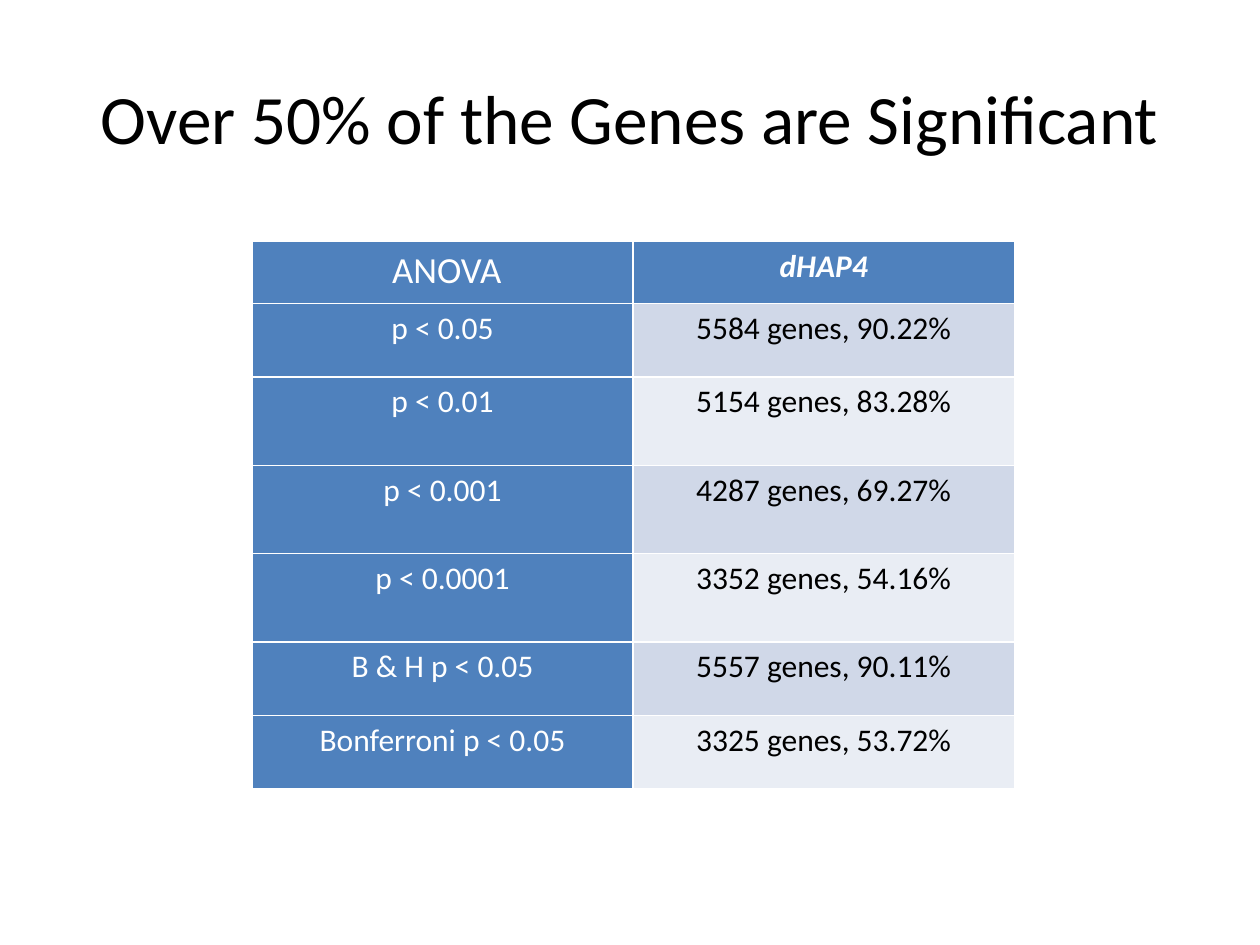
import pptx
import pptx.dml.color
import pptx.enum.text
import pptx.oxml
import pptx.oxml.ns
import pptx.util

Pt = pptx.util.Pt
RGBColor = pptx.dml.color.RGBColor
CENTER = pptx.enum.text.PP_ALIGN.CENTER

BLACK = RGBColor(0x00, 0x00, 0x00)
WHITE = RGBColor(0xFF, 0xFF, 0xFF)
BLUE = RGBColor(0x4F, 0x81, 0xBD)
BANDS = (RGBColor(0xD0, 0xD8, 0xE8), RGBColor(0xE9, 0xED, 0xF4))

HEADINGS = (" ANOVA", "dHAP4")
RESULTS = (
    ("p < 0.05", "5584 genes, 90.22%"),
    ("p < 0.01", "5154 genes, 83.28%"),
    ("p < 0.001", "4287 genes, 69.27%"),
    ("p < 0.0001", "3352 genes, 54.16%"),
    ("B & H p < 0.05", "5557 genes, 90.11%"),
    ("Bonferroni p < 0.05", "3325 genes, 53.72%"),
)
ROW_HEIGHTS = (35.5, 42, 50.5, 50.5, 50.5, 42, 42)


class Deck:
    font = "Calibri"
    title_size = 39.6
    body_size = 18
    border_width = 1

    def __init__(self, width, height):
        self.presentation = pptx.Presentation()
        self.presentation.slide_width = Pt(width)
        self.presentation.slide_height = Pt(height)
        self.slide = None

    def add_slide(self):
        title_only = self.presentation.slide_layouts[5]
        self.slide = self.presentation.slides.add_slide(title_only)

    def style(self, paragraph, size, color, bold=False, italic=False):
        paragraph.alignment = CENTER
        for run in paragraph.runs:
            run.font.name = self.font
            run.font.size = Pt(size)
            run.font.color.rgb = color
            run.font.bold = bold
            run.font.italic = italic

    def title(self, text, left, top, width, height):
        title = self.slide.shapes.title
        title.left, title.top = Pt(left), Pt(top)
        title.width, title.height = Pt(width), Pt(height)
        frame = title.text_frame
        frame.text = text
        frame.word_wrap = True
        frame.auto_size = pptx.enum.text.MSO_AUTO_SIZE.NONE
        frame.vertical_anchor = pptx.enum.text.MSO_ANCHOR.MIDDLE
        self.style(frame.paragraphs[0], self.title_size, BLACK)

    def table(self, rows, columns, left, top, width, row_heights):
        frame = self.slide.shapes.add_table(
            rows, columns, Pt(left), Pt(top), Pt(width), Pt(sum(row_heights))
        )
        for row, height in zip(frame.table.rows, row_heights):
            row.height = Pt(height)
        return frame.table

    def cell(self, cell, text, fill, color, size=body_size, **emphasis):
        cell.text_frame.text = text
        cell.margin_left = cell.margin_right = Pt(5)
        cell.margin_top = cell.margin_bottom = Pt(0)
        paragraph = cell.text_frame.paragraphs[0]
        paragraph.line_spacing = 1.15
        self.style(paragraph, size, color, **emphasis)
        self.borders(cell)
        cell.fill.solid()
        cell.fill.fore_color.rgb = fill

    def borders(self, cell):
        properties = cell._tc.get_or_add_tcPr()
        for side in ("lnL", "lnR", "lnT", "lnB"):
            properties.append(pptx.oxml.parse_xml(
                f'<a:{side} {pptx.oxml.ns.nsdecls("a")} w="{Pt(self.border_width)}">'
                f'<a:solidFill><a:srgbClr val="{WHITE}"/></a:solidFill></a:{side}>'
            ))

    def save(self):
        self.presentation.save("out.pptx")


def main():
    deck = Deck(720, 540)
    deck.add_slide()
    deck.title("Over 50% of the Genes are Significant", 36, 21.6, 648, 90)
    table = deck.table(len(ROW_HEIGHTS), len(HEADINGS), 144, 138, 435.6, ROW_HEIGHTS)
    test_heading, strain_heading = HEADINGS
    deck.cell(table.cell(0, 0), test_heading, BLUE, WHITE, size=21)
    deck.cell(table.cell(0, 1), strain_heading, BLUE, WHITE, bold=True, italic=True)
    for index, (threshold, genes) in enumerate(RESULTS):
        deck.cell(table.cell(index + 1, 0), threshold, BLUE, WHITE)
        deck.cell(table.cell(index + 1, 1), genes, BANDS[index % 2], BLACK)
    deck.save()


if __name__ == "__main__":
    main()
